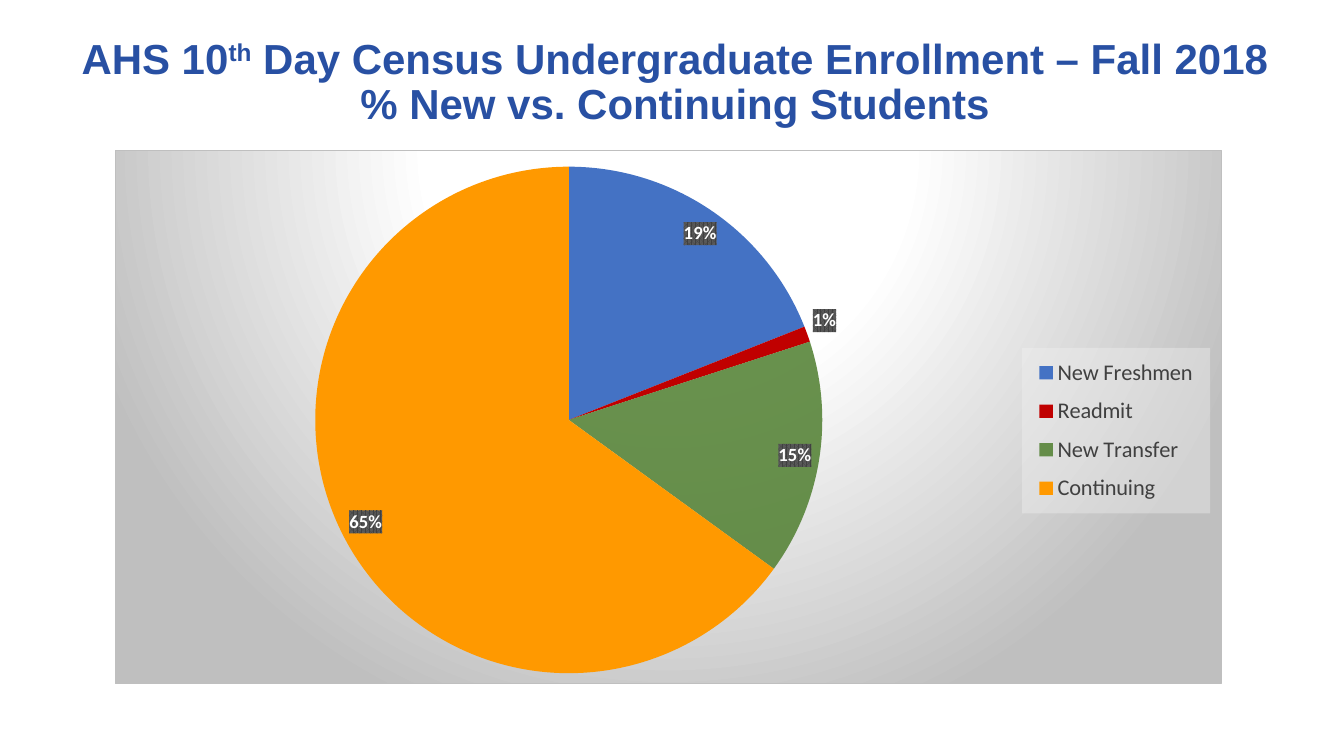
from lxml import etree
from pptx import Presentation
from pptx.chart import data
from pptx.dml import color
from pptx.enum import chart as chart_enum
from pptx.enum import text
from pptx.oxml import parse_xml
from pptx.oxml.ns import nsdecls, qn
from pptx.util import Pt

GROUPS = [
    ("New Freshmen", 19, "4472C4"),
    ("Readmit", 1, "C00000"),
    ("New Transfer", 15, "548235"),
    ("Continuing", 65, "FF9900"),
]


def rgb(value):
    """Turn a hex string into a colour."""
    return color.RGBColor.from_string(value)


def style_font(font, size, fill, name, bold=False):
    """Format a font of a run or of a chart part."""
    font.size, font.name, font.bold = Pt(size), name, bold
    font.color.rgb = rgb(fill)


def add_text(paragraph, content, baseline=None, **font_format):
    """Add a formatted run, raised by a percentage if asked."""
    run = paragraph.add_run()
    run.text = content
    style_font(run.font, **font_format)
    if baseline:
        run.font._element.set("baseline", str(baseline * 1000))


def add_title(slide, left, top, width, height):
    """Fill the title placeholder within its box."""
    title = slide.shapes.title
    title.left, title.top, title.width, title.height = map(Pt, (left, top, width, height))
    frame = title.text_frame
    frame.word_wrap = True
    frame.auto_size = text.MSO_AUTO_SIZE.NONE
    frame.vertical_anchor = text.MSO_ANCHOR.MIDDLE
    paragraph = frame.paragraphs[0]
    paragraph.alignment = text.PP_ALIGN.CENTER
    paragraph.line_spacing = 0.9
    look = dict(size=30, fill="2850A3", name="Arial", bold=True)
    add_text(paragraph, "AHS 10", **look)
    add_text(paragraph, "th", baseline=30, **look)
    add_text(paragraph, " Day Census Undergraduate Enrollment – Fall 2018 "
             "% New vs. Continuing Students", **look)


def shape_properties(content):
    """Make a chart shape properties element around its fill and line."""
    return parse_xml(f'<c:spPr {nsdecls("c", "a")}>{content}</c:spPr>')


def manual_layout(x, y, width, height, inner=False):
    """Make a chart layout from fractions of the chart area."""
    target = '<c:layoutTarget val="inner"/>' if inner else ""
    return parse_xml(
        f'<c:layout {nsdecls("c")}><c:manualLayout>{target}'
        '<c:xMode val="edge"/><c:yMode val="edge"/>'
        f'<c:x val="{x}"/><c:y val="{y}"/><c:w val="{width}"/><c:h val="{height}"/>'
        '</c:manualLayout></c:layout>')


def replace_layout(parent, layout, index):
    """Put a layout into a chart part in place of any present one."""
    for present in parent.findall(qn("c:layout")):
        parent.remove(present)
    parent.insert(index, layout)


def style_chart_area(chart):
    """Give the chart area its radial gradient and thin border."""
    stops = "".join(
        f'<a:gs pos="{position * 1000}"><a:srgbClr val="{fill}"/></a:gs>'
        for position, fill in ((0, "FFFFFF"), (39, "FFFFFF"), (100, "BFBFBF")))
    area = shape_properties(
        f'<a:gradFill><a:gsLst>{stops}</a:gsLst><a:path path="circle">'
        '<a:fillToRect l="50000" t="-80000" r="50000" b="180000"/></a:path></a:gradFill>'
        f'<a:ln w="{Pt(0.75)}"><a:solidFill><a:srgbClr val="BFBFBF"/></a:solidFill></a:ln>')
    chart._chartSpace.find(qn("c:chart")).addnext(area)


def style_slices(plot):
    """Colour each slice, the transfer slice slightly transparent."""
    for index, (group, _, fill) in enumerate(GROUPS):
        slice_fill = plot.series[0].points[index].format.fill
        slice_fill.solid()
        slice_fill.fore_color.rgb = rgb(fill)
        if group == "New Transfer":
            point = plot.series[0]._element.findall(qn("c:dPt"))[index]
            etree.SubElement(point.find(".//" + qn("a:srgbClr")), qn("a:alpha"), val="88000")


def style_labels(plot):
    """Show percentages in white on dark patterned boxes."""
    plot.has_data_labels = True
    labels = plot.data_labels
    labels.show_percentage, labels.show_value = True, False
    labels.number_format, labels.number_format_is_linked = "0%", False
    labels.position = chart_enum.XL_LABEL_POSITION.BEST_FIT
    style_font(labels.font, 13.3, "FFFFFF", "Calibri", bold=True)
    labels._element.find(qn("c:txPr")).addprevious(shape_properties(
        '<a:pattFill prst="pct75"><a:fgClr><a:srgbClr val="404040"/></a:fgClr>'
        '<a:bgClr><a:srgbClr val="595959"/></a:bgClr></a:pattFill>'))


def style_legend(chart):
    """Place the legend on the right over a pale translucent box."""
    chart.has_legend = True
    legend = chart.legend
    legend.position = chart_enum.XL_LEGEND_POSITION.RIGHT
    legend.include_in_layout = False
    style_font(legend.font, 16, "404040", "Calibri")
    replace_layout(legend._element, manual_layout(0.82, 0.37, 0.17, 0.31), 1)
    legend._element.find(qn("c:txPr")).addprevious(shape_properties(
        '<a:solidFill><a:srgbClr val="F2F2F2"><a:alpha val="39000"/></a:srgbClr></a:solidFill>'))


def add_enrollment_pie(slide, left, top, width, height):
    """Draw the enrollment pie chart within its box."""
    chart_data = data.CategoryChartData()
    chart_data.categories = [group for group, _, _ in GROUPS]
    chart_data.add_series("Series 1", [share for _, share, _ in GROUPS])
    chart = slide.shapes.add_chart(
        chart_enum.XL_CHART_TYPE.PIE, *map(Pt, (left, top, width, height)), chart_data).chart
    chart.has_title = False
    style_font(chart.font, 10, "000000", "Calibri")
    plot = chart.plots[0]
    plot.vary_by_categories = True
    style_slices(plot)
    style_labels(plot)
    style_legend(chart)
    style_chart_area(chart)
    plot_area = chart._chartSpace.find(".//" + qn("c:plotArea"))
    replace_layout(plot_area, manual_layout(0.18, 0.03, 0.46, 0.95, inner=True), 0)


def main():
    """Build and save the enrollment slide."""
    presentation = Presentation()
    presentation.slide_width, presentation.slide_height = Pt(960), Pt(540)
    slide = presentation.slides.add_slide(presentation.slide_layouts[5])
    add_title(slide, 43.2, 28.8, 878.4, 61.2)
    add_enrollment_pie(slide, 82.08, 107.28, 790.56, 381.6)
    presentation.save("out.pptx")


if __name__ == "__main__":
    main()
